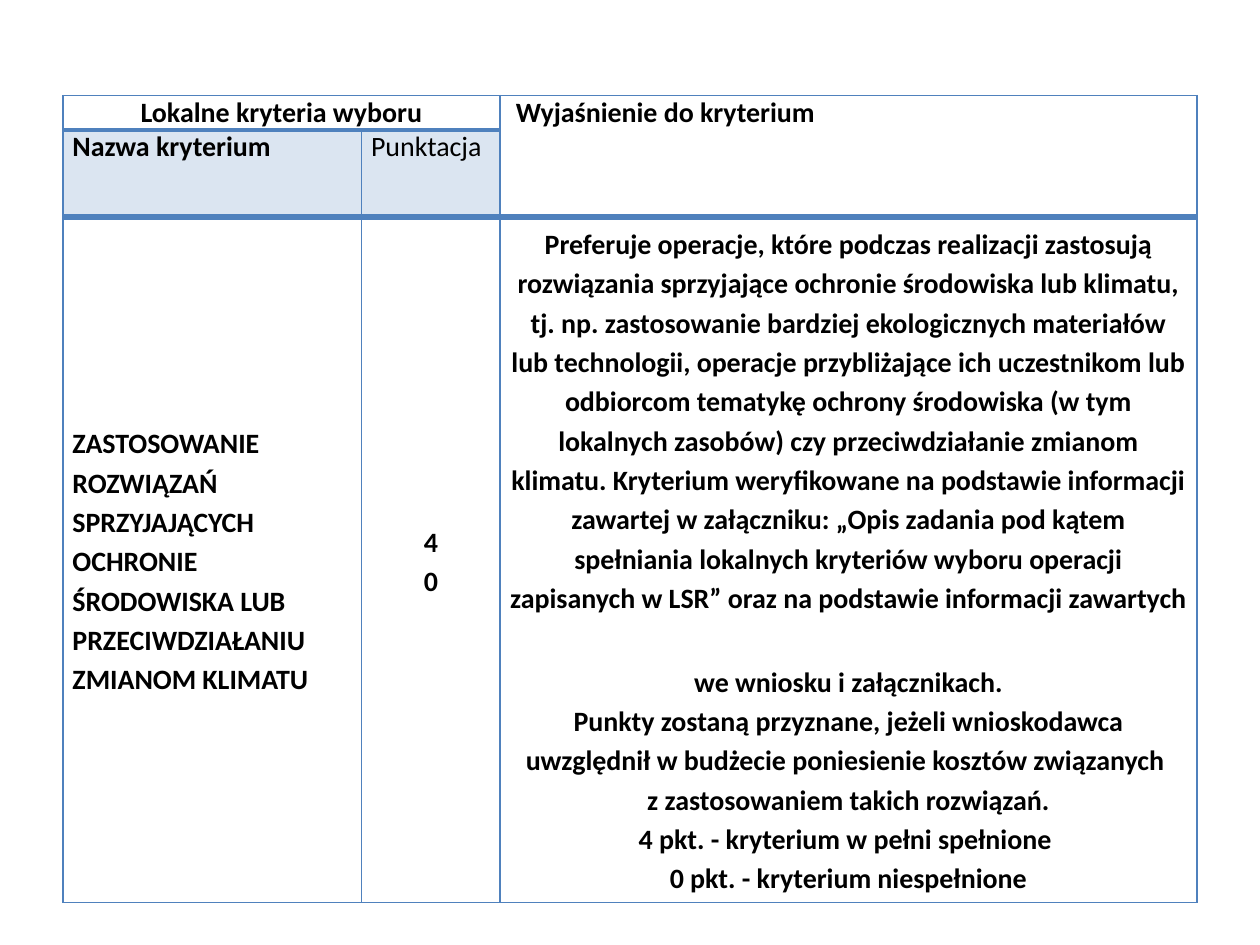
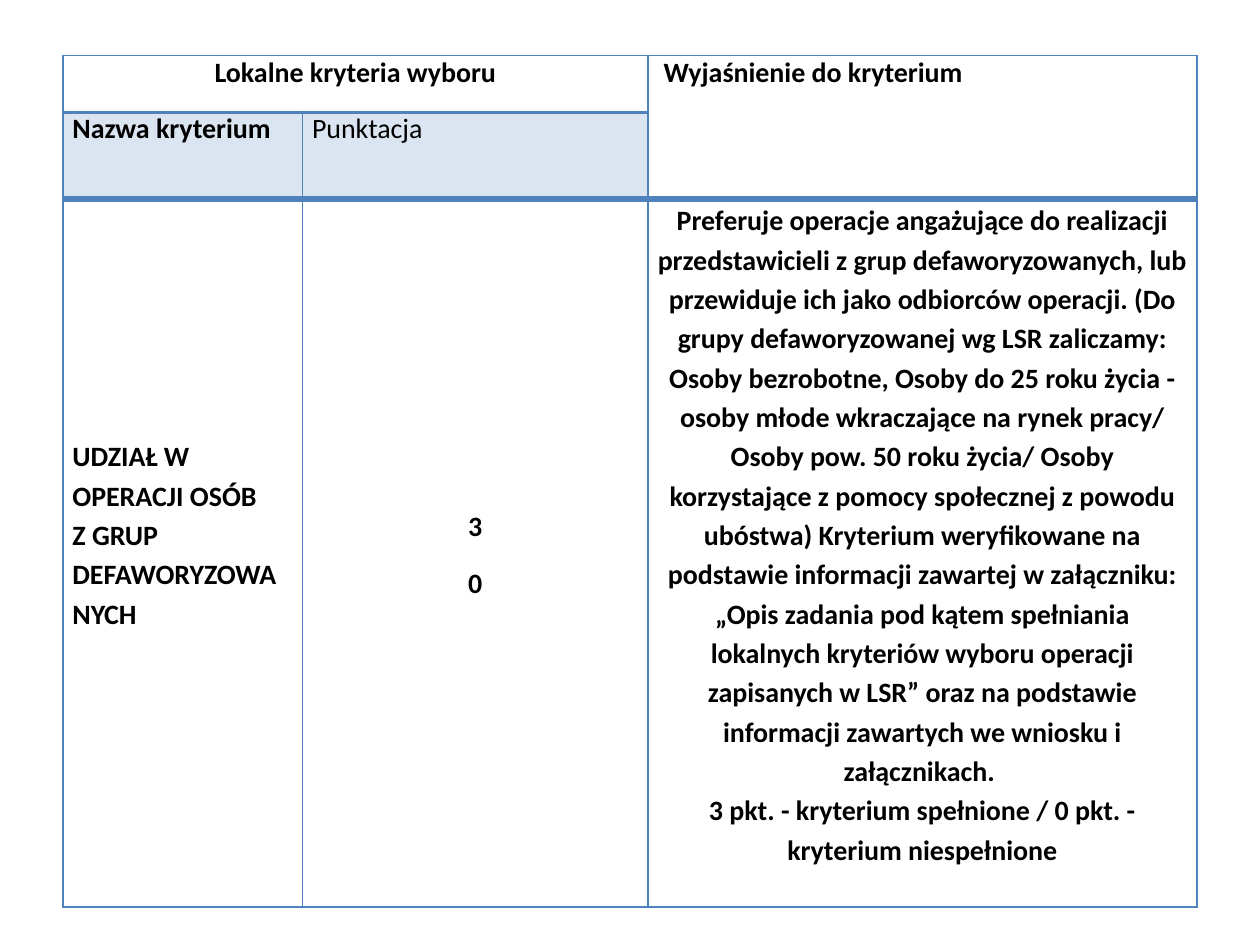
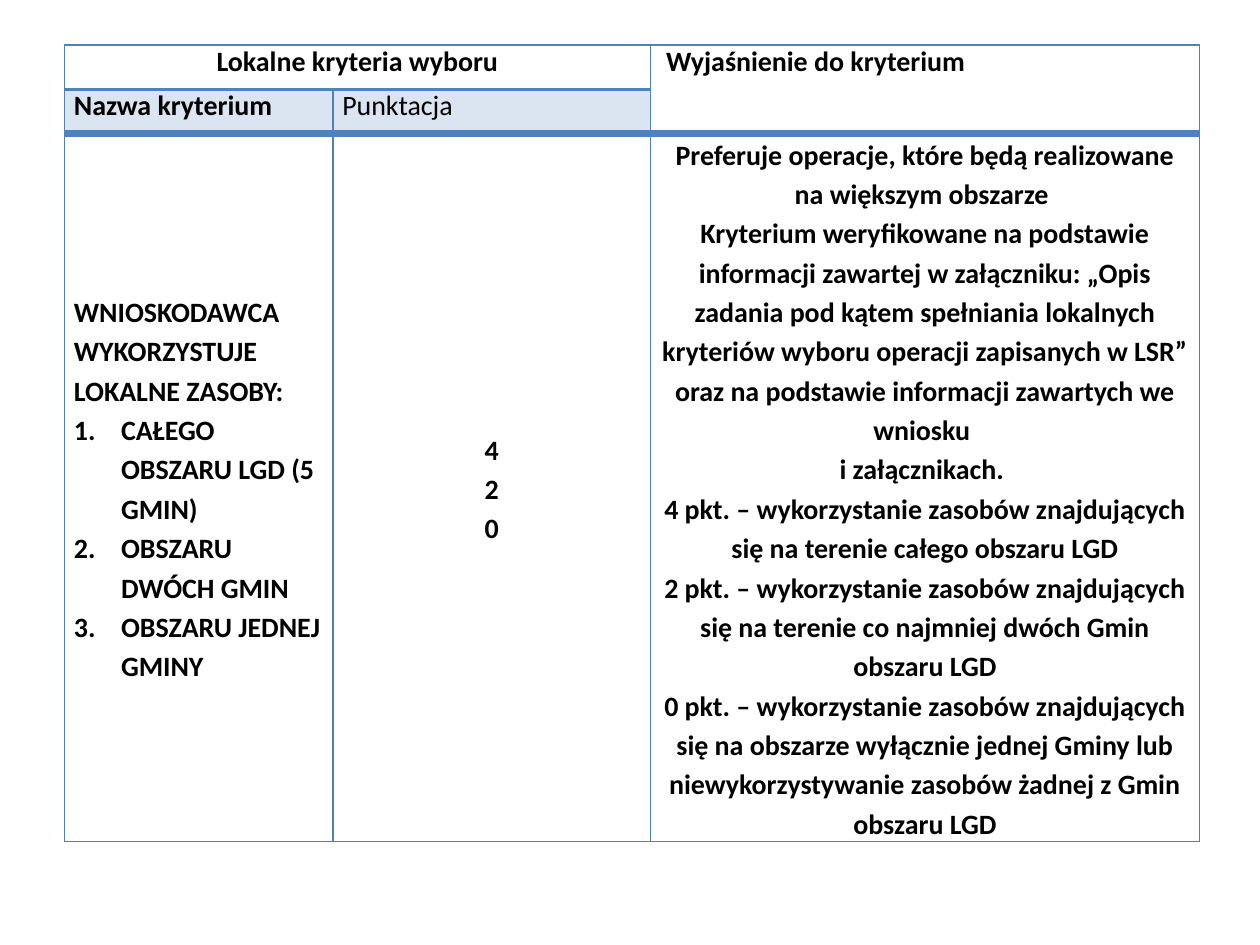
from dataclasses import dataclass

from lxml import etree
from pptx import Presentation
from pptx.dml.color import RGBColor
from pptx.enum.text import MSO_ANCHOR, PP_ALIGN
from pptx.oxml.ns import qn
from pptx.util import Cm, Pt

LEFT, CENTER = PP_ALIGN.LEFT, PP_ALIGN.CENTER
TOP, MIDDLE = MSO_ANCHOR.TOP, MSO_ANCHOR.MIDDLE


@dataclass(frozen=True)
class Theme:
    font: str = "Calibri"
    size: int = 16
    text: str = "000000"
    accent: str = "4F81BD"
    tint_percent: int = 20
    thin: int = 1
    medium: int = 2
    thick: int = 4
    side_margin: float = 0.19
    body_spacing: float = 1.15
    list_indent: float = 0.95


THEME = Theme()

CRITERIA = [
    {
        "at": (1.27, 1.93),
        "columns": (6.02, 2.79, 14.05),
        "rows": (0.66, 1.75, 13.82),
        "name": ["ZASTOSOWANIE ROZWIĄZAŃ SPRZYJAJĄCYCH OCHRONIE ŚRODOWISKA LUB "
                 "PRZECIWDZIAŁANIU \nZMIANOM KLIMATU"],
        "areas": [],
        "points": ["4", "0"],
        "points_gap": 0,
        "bottom_gap": 0,
        "explanation": [
            "Preferuje operacje, które podczas realizacji zastosują rozwiązania "
            "sprzyjające ochronie środowiska lub klimatu, tj. np. zastosowanie bardziej "
            "ekologicznych materiałów lub technologii, operacje przybliżające ich "
            "uczestnikom lub odbiorcom tematykę ochrony środowiska (w tym lokalnych "
            "zasobów) czy przeciwdziałanie zmianom klimatu. Kryterium weryfikowane na "
            "podstawie informacji zawartej w załączniku: „Opis zadania pod kątem "
            "spełniania lokalnych kryteriów wyboru operacji zapisanych w LSR” oraz na "
            "podstawie informacji zawartych \nwe wniosku i załącznikach.\n"
            "Punkty zostaną przyznane, jeżeli wnioskodawca uwzględnił w budżecie "
            "poniesienie kosztów związanych \nz zastosowaniem takich rozwiązań.",
            "4 pkt. - kryterium w pełni spełnione \n0 pkt. - kryterium niespełnione",
        ],
    },
    {
        "at": (1.27, 1.12),
        "columns": (4.83, 6.96, 11.07),
        "rows": (1.14, 1.75, 14.25),
        "name": ["UDZIAŁ W OPERACJI OSÓB \nZ GRUP DEFAWORYZOWANYCH"],
        "areas": [],
        "points": ["3", "0"],
        "points_gap": 10,
        "bottom_gap": 0.79,
        "explanation": [
            "Preferuje operacje angażujące do realizacji przedstawicieli z grup "
            "defaworyzowanych, lub przewiduje ich jako odbiorców operacji. (Do grupy "
            "defaworyzowanej wg LSR zaliczamy: Osoby bezrobotne, Osoby do 25 roku życia "
            "- osoby młode wkraczające na rynek pracy/ Osoby pow. 50 roku życia/ Osoby "
            "korzystające z pomocy społecznej z powodu ubóstwa) Kryterium weryfikowane "
            "na podstawie informacji zawartej w załączniku: „Opis zadania pod kątem "
            "spełniania lokalnych kryteriów wyboru operacji zapisanych w LSR” oraz na "
            "podstawie informacji zawartych we wniosku i załącznikach. \n"
            "3 pkt. - kryterium spełnione / 0 pkt. - kryterium niespełnione",
        ],
    },
    {
        "at": (1.3, 0.91),
        "columns": (5.41, 6.4, 11.07),
        "rows": (0.89, 0.89, 14.25),
        "name": ["WNIOSKODAWCA WYKORZYSTUJE LOKALNE ZASOBY:"],
        "areas": ["CAŁEGO OBSZARU LGD (5 GMIN)", "OBSZARU DWÓCH GMIN",
                  "OBSZARU JEDNEJ GMINY"],
        "points": ["4", "2", "0"],
        "points_gap": 0,
        "bottom_gap": 0,
        "explanation": [
            "Preferuje operacje, które będą realizowane na większym obszarze ",
            "Kryterium weryfikowane na podstawie informacji zawartej w załączniku: „Opis "
            "zadania pod kątem spełniania lokalnych kryteriów wyboru operacji zapisanych "
            "w LSR” oraz na podstawie informacji zawartych we wniosku \ni załącznikach. \n"
            "4 pkt. – wykorzystanie zasobów znajdujących się na terenie całego obszaru LGD",
            "2 pkt. – wykorzystanie zasobów znajdujących się na terenie co najmniej dwóch "
            "Gmin obszaru LGD",
            "0 pkt. – wykorzystanie zasobów znajdujących się na obszarze wyłącznie jednej "
            "Gminy lub niewykorzystywanie zasobów żadnej z Gmin obszaru LGD",
        ],
    },
]


def write(cell, texts, align=LEFT, bold=True, spacing=1.0, gap=0, numbered=()):
    """Fill a cell with plain paragraphs, then with numbered ones."""
    frame = cell.text_frame
    for index, text in enumerate([*texts, *numbered]):
        para = frame.add_paragraph() if index else frame.paragraphs[0]
        para.alignment = align
        para.line_spacing = spacing
        para.space_after = Pt(gap)
        if index >= len(texts):
            properties = para._p.get_or_add_pPr()
            properties.set("marL", str(Cm(THEME.list_indent)))
            properties.set("indent", str(-Cm(THEME.list_indent)))
            etree.SubElement(properties, qn("a:buFont"), typeface="+mj-lt")
            etree.SubElement(properties, qn("a:buAutoNum"), type="arabicPeriod")
        for line_index, line in enumerate(text.split("\n")):
            if line_index:
                para.add_line_break()
            span = para.add_run()
            span.text = line
            span.font.name = THEME.font
            span.font.size = Pt(THEME.size)
            span.font.bold = bold
            span.font.color.rgb = RGBColor.from_string(THEME.text)


def outline(cell, top, bottom):
    """Draw thin sides and the given top and bottom widths, in points."""
    properties = cell._tc.get_or_add_tcPr()
    widths = {"lnL": THEME.thin, "lnR": THEME.thin, "lnT": top, "lnB": bottom}
    for side, width in widths.items():
        line = etree.SubElement(properties, qn(f"a:{side}"), w=str(Pt(width)))
        paint = etree.SubElement(line, qn("a:solidFill"))
        etree.SubElement(paint, qn("a:srgbClr"), val=THEME.accent)


deck = Presentation()
deck.slide_width, deck.slide_height = Cm(25.4), Cm(19.05)
rules = (THEME.thin, THEME.medium, THEME.thick, THEME.thin)

for criterion in CRITERIA:
    page = deck.slides.add_slide(deck.slide_layouts[6])
    left, top = criterion["at"]
    columns, rows = criterion["columns"], criterion["rows"]
    table = page.shapes.add_table(
        len(rows), len(columns), Cm(left), Cm(top), Cm(sum(columns)), Cm(sum(rows))
    ).table
    table.first_row = table.horz_banding = False
    for column, width in zip(table.columns, columns):
        column.width = Cm(width)
    for row, height in zip(table.rows, rows):
        row.height = Cm(height)

    for row in range(len(rows)):
        for column in range(len(columns)):
            cell = table.cell(row, column)
            cell.margin_left = cell.margin_right = Cm(THEME.side_margin)
            cell.margin_top = cell.margin_bottom = 0
            cell.vertical_anchor = MIDDLE if row == 2 else TOP
            spans_header = row == 0 and column == 2
            outline(cell, rules[row], THEME.thick if spans_header else rules[row + 1])
            if row == 1 and column < 2:
                cell.fill.solid()
                cell.fill.fore_color.rgb = RGBColor.from_string(THEME.accent)
                colour = cell._tc.tcPr.find(f"{qn('a:solidFill')}/{qn('a:srgbClr')}")
                etree.SubElement(colour, qn("a:alpha"), val=str(THEME.tint_percent * 1000))
            else:
                cell.fill.background()

    table.cell(0, 0).merge(table.cell(0, 1))
    table.cell(0, 2).merge(table.cell(1, 2))
    write(table.cell(0, 0), ["Lokalne kryteria wyboru"], CENTER)
    write(table.cell(0, 2), [" Wyjaśnienie do kryterium"])
    write(table.cell(1, 0), ["Nazwa kryterium"])
    write(table.cell(1, 1), ["Punktacja"], bold=False)

    name, points, explanation = (table.cell(2, column) for column in range(3))
    write(name, criterion["name"], spacing=THEME.body_spacing, numbered=criterion["areas"])
    write(points, criterion["points"], CENTER, spacing=THEME.body_spacing,
          gap=criterion["points_gap"])
    write(explanation, criterion["explanation"], CENTER, spacing=THEME.body_spacing)
    name.margin_bottom = explanation.margin_bottom = Cm(criterion["bottom_gap"])

deck.save("out.pptx")
